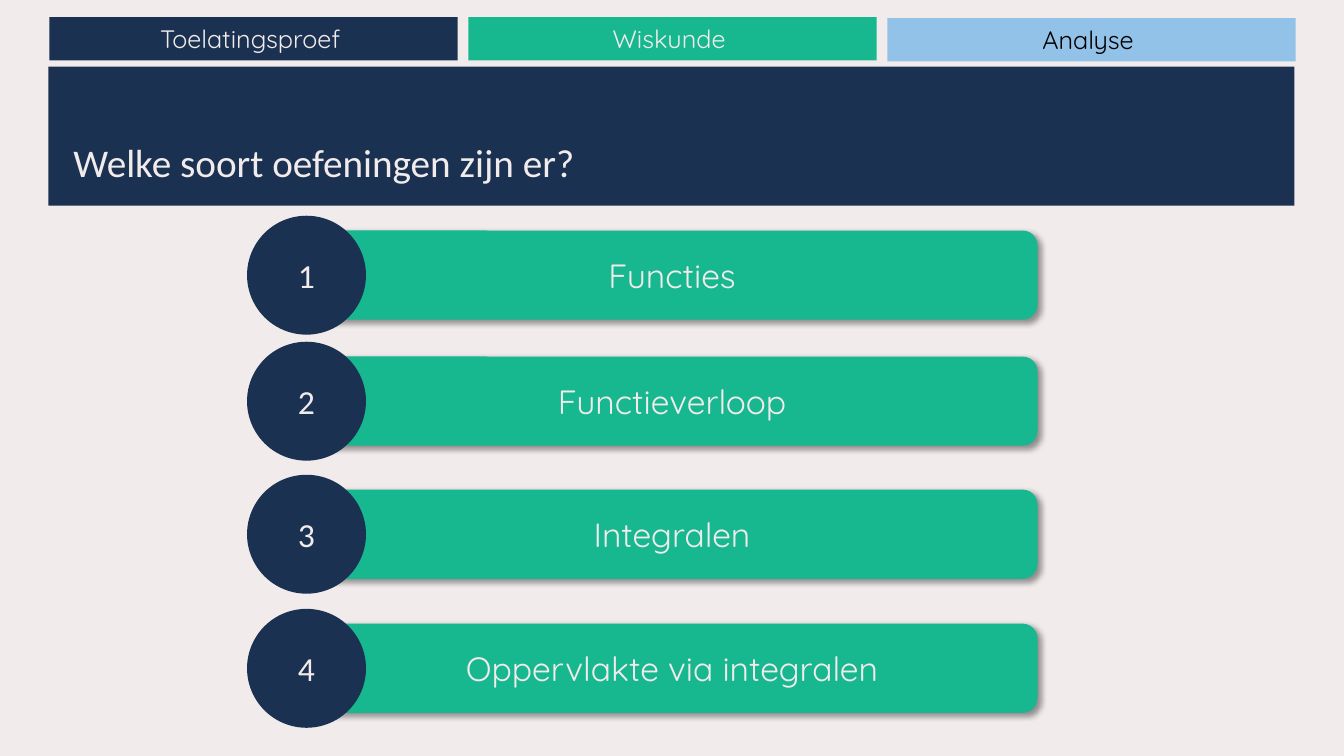
from lxml import etree
from pptx import Presentation
from pptx.dml.color import RGBColor
from pptx.enum.shapes import MSO_SHAPE
from pptx.enum.text import MSO_ANCHOR, PP_ALIGN
from pptx.oxml.ns import qn
from pptx.util import Inches, Pt

RECT, ROUND, OVAL = MSO_SHAPE.RECTANGLE, MSO_SHAPE.ROUNDED_RECTANGLE, MSO_SHAPE.OVAL
LEFT, CENTER = PP_ALIGN.LEFT, PP_ALIGN.CENTER
MIDDLE, BOTTOM = MSO_ANCHOR.MIDDLE, MSO_ANCHOR.BOTTOM

COLORS = {"paper": "F1ECEB", "navy": "1B3151", "green": "17B790",
          "sky": "93C2E8", "black": "000000"}
HEADING, BODY = "Calibri", "Quicksand"

# The trailing space belongs to each label and shifts its centring slightly.
TABS = [("Toelatingsproef ", "navy", "paper", 0.17),
        ("Wiskunde ", "green", "paper", 0.17),
        ("Analyse ", "sky", "black", 0.18)]
EXERCISES = [("Functies", 2.14), ("Functieverloop", 3.39),
             ("Integralen", 4.71), ("Oppervlakte via integralen", 6.04)]


def rgb(name):
    return RGBColor.from_string(COLORS[name])


def add_text(sp, text, size=24, font=BODY, color="paper", align=CENTER, anchor=MIDDLE):
    tf = sp.text_frame
    tf.word_wrap = True
    tf.vertical_anchor = anchor
    p = tf.paragraphs[0]
    p.alignment = align
    r = p.add_run()
    r.text = text
    r.font.size = Pt(size)
    r.font.name = font
    r.font.color.rgb = rgb(color)


def add_block(s, kind, box, fill):
    sp = s.shapes.add_shape(kind, *map(Inches, box))
    sp.shadow.inherit = False
    sp.fill.solid()
    sp.fill.fore_color.rgb = rgb(fill)
    sp.line.fill.background()
    return sp


def add_shadow(sp, blur=4, dist=3, angle=45, alpha=40):
    effects = sp._element.spPr.find(qn("a:effectLst"))
    shadow = etree.SubElement(effects, qn("a:outerShdw"), blurRad=str(Pt(blur)),
                              dist=str(Pt(dist)), dir=str(angle * 60000),
                              algn="tl", rotWithShape="0")
    color = etree.SubElement(shadow, qn("a:srgbClr"), val=COLORS["black"])
    etree.SubElement(color, qn("a:alpha"), val=str(alpha * 1000))


def add_tabs(s, left, width, height, pitch):
    for i, (label, fill, color, top) in enumerate(TABS):
        sp = add_block(s, RECT, (left + i * pitch, top, width, height), fill)
        add_text(sp, label, size=18, color=color)


def add_title(s, left, top, width, height, text):
    add_block(s, RECT, (left, top, width, height), "navy")
    inset = 0.15
    box = (left + inset, top + inset, width - 2 * inset, height - 2 * inset)
    sp = s.shapes.add_textbox(*map(Inches, box))
    add_text(sp, text, size=28, font=HEADING, align=LEFT, anchor=BOTTOM)


def add_exercise(s, left, top, width, diameter, number, label):
    """Place a numbered circle over the left end of a shadowed bar."""
    radius = diameter / 2
    bar_height = diameter * 0.75
    bar = add_block(s, ROUND, (left + radius, top + (diameter - bar_height) / 2,
                               width - radius, bar_height), "green")
    add_shadow(bar)
    add_text(bar, label)
    circle = add_block(s, OVAL, (left, top, diameter, diameter), "navy")
    add_text(circle, str(number), font=HEADING)


def main():
    prs = Presentation()
    prs.slide_width, prs.slide_height = Inches(13.33), Inches(7.5)
    s = prs.slides.add_slide(prs.slide_layouts[6])
    s.background.fill.solid()
    s.background.fill.fore_color.rgb = rgb("paper")

    add_tabs(s, left=0.49, width=4.05, height=0.43, pitch=4.155)
    add_title(s, 0.48, 0.66, 12.36, 1.38, "Welke soort oefeningen zijn er?")
    for number, (label, top) in enumerate(EXERCISES, 1):
        add_exercise(s, 2.45, top, 7.84, 1.18, number, label)
    prs.save("out.pptx")


if __name__ == "__main__":
    main()
